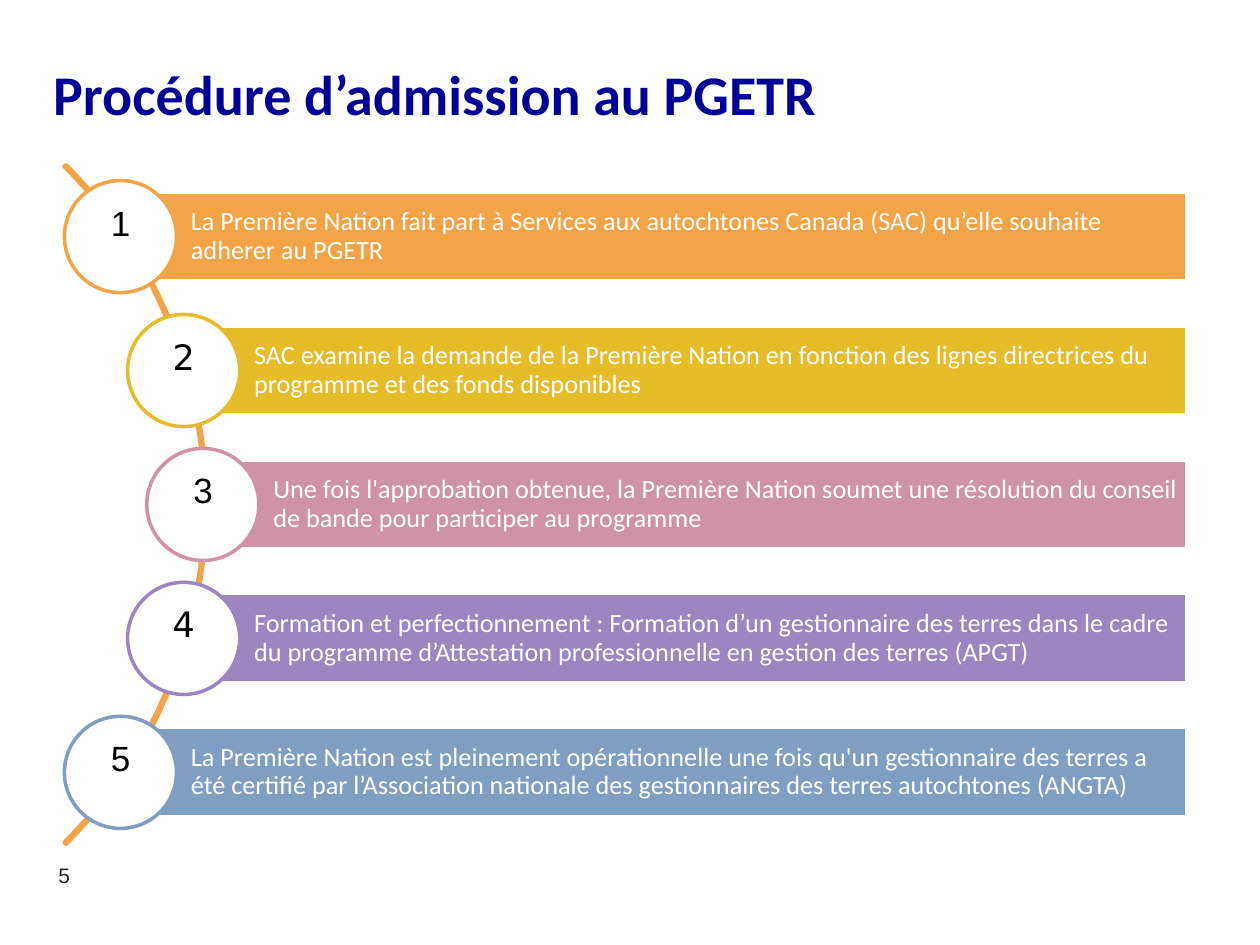
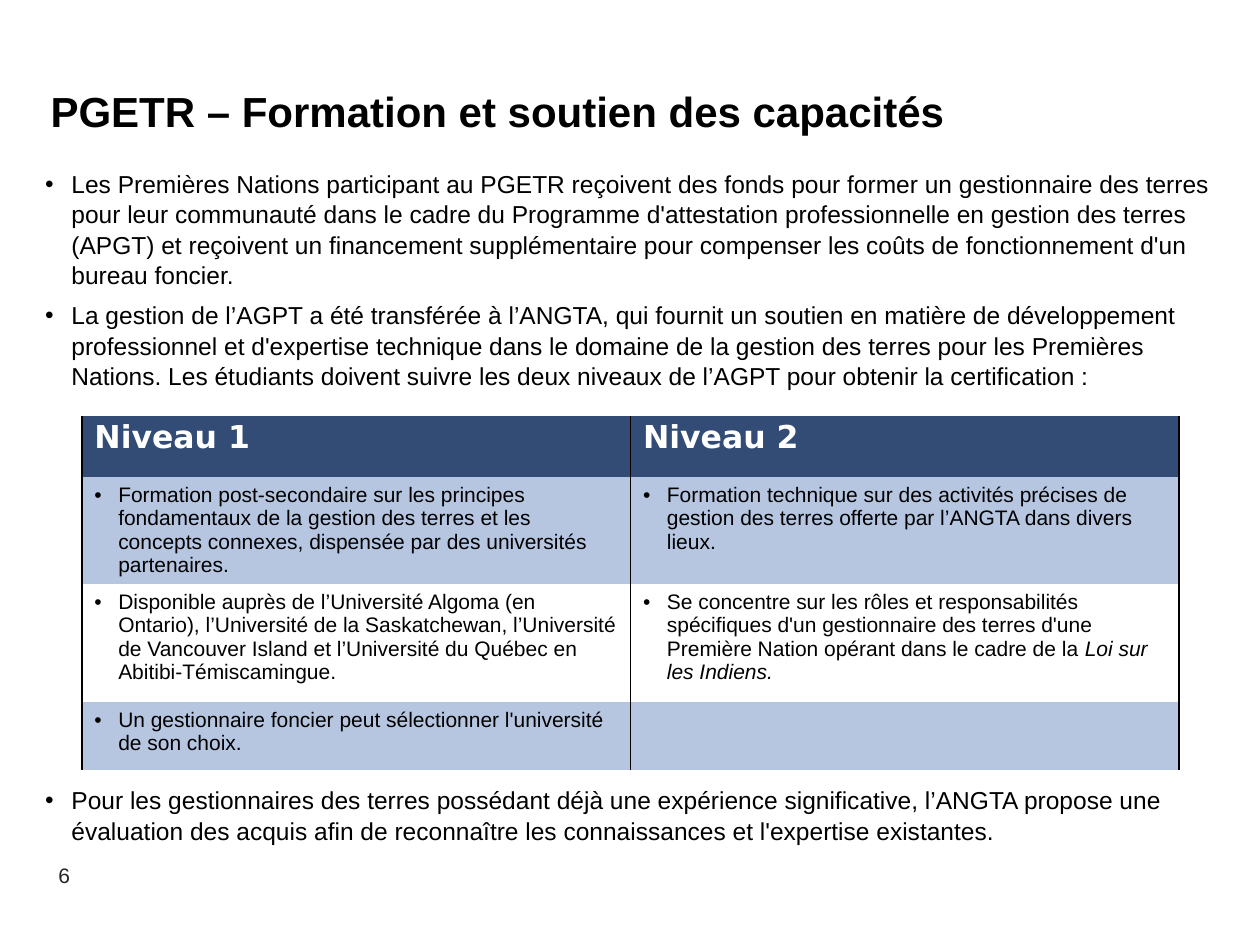
from math import sqrt

from lxml import etree
from pptx import Presentation
from pptx.dml.color import RGBColor
from pptx.enum.shapes import MSO_SHAPE
from pptx.enum.text import MSO_ANCHOR, MSO_AUTO_SIZE, PP_ALIGN
from pptx.oxml.ns import qn
from pptx.util import Cm, Pt

ARC, BAR, CIRCLE = MSO_SHAPE.BLOCK_ARC, MSO_SHAPE.RECTANGLE, MSO_SHAPE.OVAL
TOP, MIDDLE = MSO_ANCHOR.TOP, MSO_ANCHOR.MIDDLE
LEFT, CENTER = PP_ALIGN.LEFT, PP_ALIGN.CENTER
NO_AUTOFIT = MSO_AUTO_SIZE.NONE
TITLE_AND_CONTENT, TITLE_ONLY = 1, 5
NO_GRID_STYLE = "{2D5ABB26-0587-4C30-8999-92F81FD0307C}"

COLORS = {
    "white": "FFFFFF", "black": "000000", "title": "000099", "number": "262626",
    "orange": "F3A447", "yellow": "E7BC29", "pink": "D092A7",
    "purple": "9C85C0", "blue": "809EC2", "header": "324C76", "band": "B6C6E0",
}

STEPS = [
    ("orange", "Arial", "La Première Nation fait part à Services aux autochtones Canada (SAC) "
     "qu’elle souhaite adherer au PGETR"),
    ("yellow", "DejaVu Sans", "SAC examine la demande de la Première Nation en fonction des lignes "
     "directrices du programme et des fonds disponibles"),
    ("pink", "Arial", "Une fois l'approbation obtenue, la Première Nation soumet une résolution "
     "du conseil de bande pour participer au programme"),
    ("purple", "DejaVu Sans", "Formation et perfectionnement : Formation d’un gestionnaire des terres "
     "dans le cadre du programme d’Attestation professionnelle en gestion des terres (APGT)"),
    ("blue", "Arial", "La Première Nation est pleinement opérationnelle une fois qu'un gestionnaire "
     "des terres a été certifié par l’Association nationale des gestionnaires des terres "
     "autochtones (ANGTA)"),
]

SUPPORT_POINTS = [
    "Les Premières Nations participant au PGETR reçoivent des fonds pour former un gestionnaire "
    "des terres pour leur communauté dans le cadre du Programme d'attestation professionnelle en "
    "gestion des terres (APGT) et reçoivent un financement supplémentaire pour compenser les coûts "
    "de fonctionnement d'un bureau foncier.",
    "La gestion de l’AGPT a été transférée à l’ANGTA, qui fournit un soutien en matière de "
    "développement professionnel et d'expertise technique dans le domaine de la gestion des terres "
    "pour les Premières Nations. Les étudiants doivent suivre les deux niveaux de l’AGPT pour "
    "obtenir la certification :",
    "Pour les gestionnaires des terres possédant déjà une expérience significative, l’ANGTA propose "
    "une évaluation des acquis afin de reconnaître les connaissances et l'expertise existantes.",
]

ACT_NAME = "Loi sur les Indiens."
LEVELS = [
    ("Niveau 1", "Niveau 2"),
    ("Formation post-secondaire sur les principes fondamentaux de la gestion des terres et les "
     "concepts connexes, dispensée par des universités partenaires.",
     "Formation technique sur des activités précises de gestion des terres offerte par l’ANGTA "
     "dans divers lieux."),
    ("Disponible auprès de l’Université Algoma (en Ontario), l’Université de la Saskatchewan, "
     "l’Université de Vancouver Island et l’Université du Québec en Abitibi-Témiscamingue.",
     "Se concentre sur les rôles et responsabilités spécifiques d'un gestionnaire des terres d'une "
     "Première Nation opérant dans le cadre de la "),
    ("Un gestionnaire foncier peut sélectionner l'université de son choix.", ""),
]


def rgb(color):
    return RGBColor.from_string(COLORS[color])


class Deck:
    def __init__(self):
        self.prs = Presentation()
        self.prs.slide_width, self.prs.slide_height = Cm(25.4), Cm(19.05)
        self.slide = None

    def style(self, paragraph, size, color="black", font="Arial", bold=False,
              align=LEFT, spacing=1.0, before=0, after=0):
        paragraph.alignment = align
        paragraph.line_spacing = spacing
        paragraph.space_before, paragraph.space_after = Pt(before), Pt(after)
        for run in paragraph.runs:
            run.font.size, run.font.name, run.font.bold = Pt(size), font, bold
            run.font.color.rgb = rgb(color)

    def frame(self, text_frame, insets=(0, 0, 0, 0), anchor=TOP):
        text_frame.word_wrap = True
        text_frame.auto_size = NO_AUTOFIT
        text_frame.vertical_anchor = anchor
        (text_frame.margin_left, text_frame.margin_top,
         text_frame.margin_right, text_frame.margin_bottom) = map(Cm, insets)

    def place(self, shape, left, top, width, height):
        shape.left, shape.top, shape.width, shape.height = map(Cm, (left, top, width, height))

    def bullet(self, paragraph, indent):
        properties = paragraph._p.get_or_add_pPr()
        properties.set("marL", str(Cm(indent)))
        properties.set("indent", str(-Cm(indent)))
        etree.SubElement(properties, qn("a:buFont")).set("typeface", "Arial")
        etree.SubElement(properties, qn("a:buChar")).set("char", "•")

    def new_slide(self, layout, number):
        self.slide = self.prs.slides.add_slide(self.prs.slide_layouts[layout])
        self.text(str(number), 0.1, 17.32, 2.39, 0.76, (0.25, 0.13, 0.25, 0.13),
                  size=12, color="number", align=CENTER, spacing=0.9)

    def title(self, wording, left, top, **style):
        heading = self.slide.shapes.title
        self.place(heading, left, top, 21.79, 0.84)
        heading.text_frame.text = wording
        self.frame(heading.text_frame)
        self.style(heading.text_frame.paragraphs[0], bold=True, spacing=Pt(24), **style)

    def text(self, wording, left, top, width, height, insets, **style):
        box = self.slide.shapes.add_textbox(*map(Cm, (left, top, width, height)))
        box.text_frame.text = wording
        self.frame(box.text_frame, insets)
        self.style(box.text_frame.paragraphs[0], **style)

    def shape(self, preset, left, top, width, height, fill, line):
        drawn = self.slide.shapes.add_shape(preset, *map(Cm, (left, top, width, height)))
        drawn.shadow.inherit = False
        if fill:
            drawn.fill.solid()
            drawn.fill.fore_color.rgb = rgb(fill)
        else:
            drawn.fill.background()
        drawn.line.color.rgb = rgb(line)
        drawn.line.width = Pt(2)
        return drawn

    def bar(self, wording, left, top, width, height, color):
        band = self.shape(BAR, left, top, width, height, color, "white")
        band.text_frame.text = wording
        self.frame(band.text_frame, (1.42, 0.1, 0.1, 0.1), MIDDLE)
        self.style(band.text_frame.paragraphs[0], 15, "white", "Calibri", spacing=0.9)

    def bullets(self, points, left, top, width, height, gaps):
        body = self.slide.placeholders[1]
        self.place(body, left, top, width, height)
        body.text_frame.text = "\n".join(points)
        self.frame(body.text_frame)
        for paragraph, gap in zip(body.text_frame.paragraphs, gaps):
            self.bullet(paragraph, 0.53)
            self.style(paragraph, 14, spacing=1.04, before=gap, after=5.2)

    def side_borders(self, cell):
        properties = cell._tc.get_or_add_tcPr()
        for position, side in enumerate(("a:lnL", "a:lnR")):
            border = etree.Element(qn(side), w=str(Pt(1)))
            fill = etree.SubElement(border, qn("a:solidFill"))
            etree.SubElement(fill, qn("a:srgbClr")).set("val", COLORS["black"])
            properties.insert(position, border)

    def table(self, rows, left, top, column_width, heights, fills):
        columns = len(rows[0])
        graphic = self.slide.shapes.add_table(
            len(rows), columns, Cm(left), Cm(top),
            Cm(column_width * columns), Cm(sum(heights)))
        grid = graphic.table
        grid._tbl.tblPr.find(qn("a:tableStyleId")).text = NO_GRID_STYLE
        for column in grid.columns:
            column.width = Cm(column_width)
        for r, (wordings, height, fill) in enumerate(zip(rows, heights, fills)):
            grid.rows[r].height = Cm(height)
            for c, wording in enumerate(wordings):
                cell = grid.cell(r, c)
                cell.fill.solid()
                cell.fill.fore_color.rgb = rgb(fill)
                self.side_borders(cell)
                if not wording:
                    continue
                cell.text_frame.text = wording
                paragraph = cell.text_frame.paragraphs[0]
                if r == 0:
                    self.style(paragraph, 18, "white", "DejaVu Sans", True, spacing=0.9)
                else:
                    self.bullet(paragraph, 0.48)
                    self.style(paragraph, 12)
        return grid


def admission_slide(deck):
    deck.new_slide(TITLE_ONLY, 5)
    deck.title("Procédure d’admission au PGETR", 1.07, 1.7,
               size=32, color="title", font="Calibri")

    arc_x, arc_y, arc_size = -5.52, 10.17, 19.38
    arc = deck.shape(ARC, arc_x - arc_size / 2, arc_y - arc_size / 2,
                     arc_size, arc_size, None, "orange")
    for index, value in enumerate((189, 27, 0.003)):
        arc.adjustments[index] = value

    pitch, path_radius, diameter = 2.7, 9.61, 2.26
    bar_right, bar_height = 23.93, 1.8
    centers = []
    for index, (color, _, wording) in enumerate(STEPS):
        rise = (index - len(STEPS) // 2) * pitch
        x, y = arc_x + sqrt(path_radius ** 2 - rise ** 2), arc_y + rise
        deck.bar(wording, x, y - bar_height / 2, bar_right - x, bar_height, color)
        deck.shape(CIRCLE, x - diameter / 2, y - diameter / 2,
                   diameter, diameter, "white", color)
        centers.append((x, y))
    for number, ((x, y), (_, font, _)) in enumerate(zip(centers, STEPS), 1):
        deck.text(str(number), x - 0.73, y - 0.75, 1.47, 1.27, (0.13,) * 4,
                  size=20, font=font, align=CENTER, spacing=0.9)


def training_slide(deck):
    deck.new_slide(TITLE_AND_CONTENT, 6)
    deck.title("PGETR – Formation et soutien des capacités", 1.02, 1.9, size=24)
    deck.bullets(SUPPORT_POINTS, 0.91, 3.38, 23.65, 13.72, (0, 0, 219.5))
    levels = deck.table(LEVELS, 1.65, 8.38, 11.06, (1.23, 2.16, 2.38, 1.37),
                        ("header", "band", "white", "band"))
    paragraph = levels.cell(2, 1).text_frame.paragraphs[0]
    act = paragraph.add_run()
    act.text = ACT_NAME
    deck.style(paragraph, 12)
    act.font.italic = True


def main():
    deck = Deck()
    admission_slide(deck)
    training_slide(deck)
    deck.prs.save("out.pptx")


if __name__ == "__main__":
    main()
